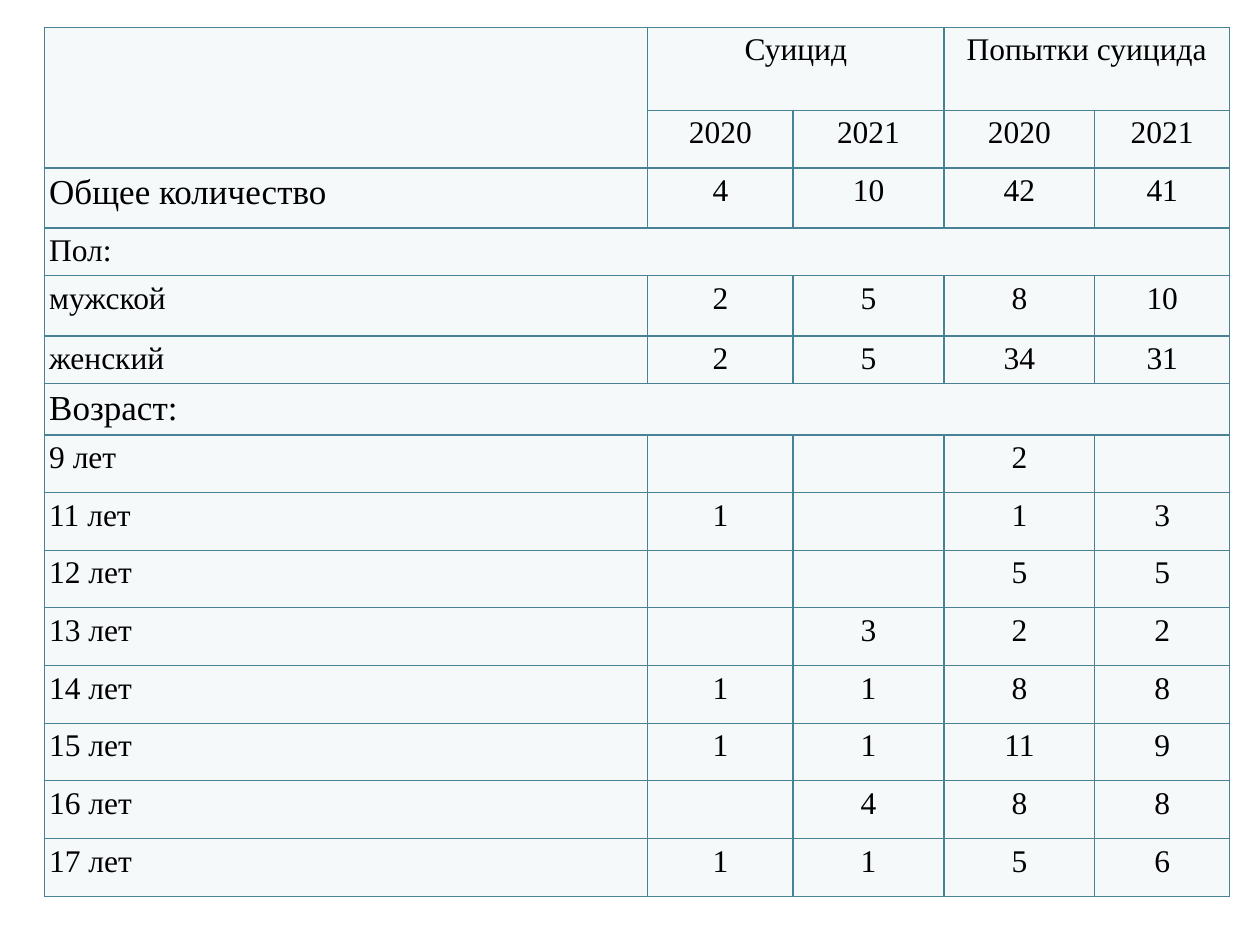
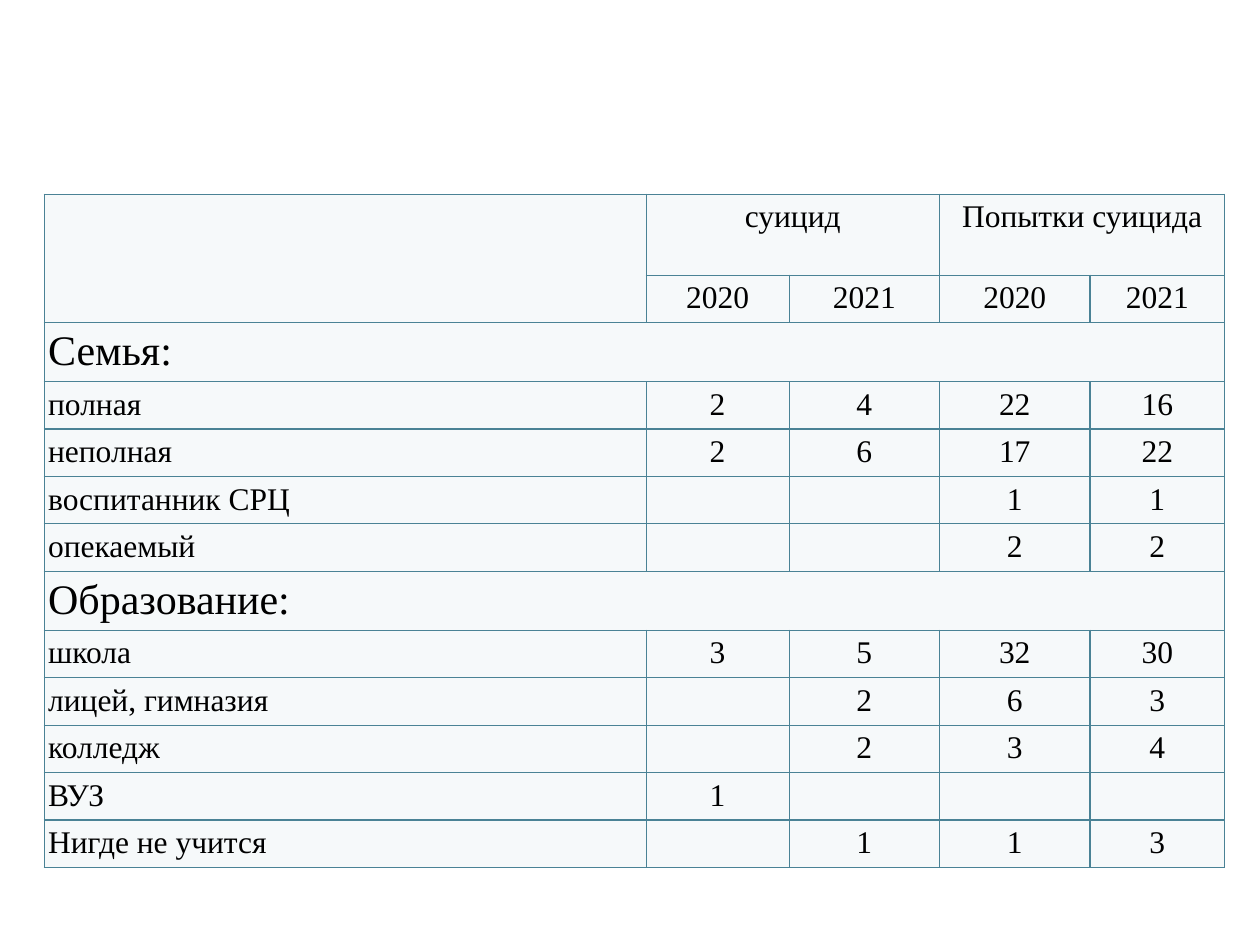
from lxml import etree
from pptx import Presentation
from pptx.dml.color import RGBColor
from pptx.enum import text
from pptx.oxml import ns
from pptx.util import Pt

FONT = "Times New Roman"
INK = "000000"
CELL_FILL = "F6F9FA"
BORDER = "4A8295"
BODY_SIZE = 18
YEARS = ["", "2020", "2021", "2020", "2021"]


def color(value):
    return RGBColor.from_string(value)


def add_borders(cell):
    properties = cell._tc.get_or_add_tcPr()
    for position, side in enumerate(("lnL", "lnR", "lnT", "lnB")):
        line = etree.Element(ns.qn(f"a:{side}"), w=str(Pt(0.75)))
        fill = etree.SubElement(line, ns.qn("a:solidFill"))
        etree.SubElement(fill, ns.qn("a:srgbClr"), val=BORDER)
        properties.insert(position, line)


tables = [
    {
        "top": 15.5,
        "columns": [345, 83, 86.25, 86.25, 77],
        "heights": [47.4, 33.1, 34.3, 27.4, 34.3, 27.4, 29.2] + [32.95] * 8,
        "side_margin": 2.9,
        "label_sizes": {"Общее количество": 20, "Возраст:": 20},
        "rows": [
            ["", "Суицид", "", "Попытки суицида", ""],
            YEARS,
            ["Общее количество", "4", "10", "42", "41"],
            ["Пол:"],
            ["мужской", "2", "5", "8", "10"],
            ["женский", "2", "5", "34", "31"],
            ["Возраст:"],
            ["9 лет", "", "", "2", ""],
            ["11 лет", "1", "", "1", "3"],
            ["12 лет", "", "", "5", "5"],
            ["13 лет", "", "3", "2", "2"],
            ["14 лет", "1", "1", "8", "8"],
            ["15 лет", "1", "1", "11", "9"],
            ["16 лет", "", "4", "8", "8"],
            ["17 лет", "1", "1", "5", "6"],
        ],
    },
    {
        "top": 111,
        "columns": [344, 81.75, 86, 86, 77],
        "heights": [46.3, 27.1, 33.7] + [27.1] * 4 + [33.7] + [27.1] * 5,
        "side_margin": 2.3,
        "label_sizes": {"Семья:": 24, "Образование:": 24},
        "rows": [
            ["", "суицид", "", "Попытки суицида", ""],
            YEARS,
            ["Семья:"],
            ["полная", "2", "4", "22", "16"],
            ["неполная", "2", "6", "17", "22"],
            ["воспитанник СРЦ", "", "", "1", "1"],
            ["опекаемый", "", "", "2", "2"],
            ["Образование:"],
            ["школа", "3", "5", "32", "30"],
            ["лицей, гимназия", "", "2", "6", "3"],
            ["колледж", "", "2", "3", "4"],
            ["ВУЗ", "1", "", "", ""],
            ["Нигде не учится", "", "1", "1", "3"],
        ],
    },
]

presentation = Presentation()
presentation.slide_width = Pt(720)
presentation.slide_height = Pt(540)

for data in tables:
    slide = presentation.slides.add_slide(presentation.slide_layouts[6])
    rows, columns, heights = data["rows"], data["columns"], data["heights"]
    shape = slide.shapes.add_table(
        len(rows), len(columns), Pt(25.2), Pt(data["top"]), Pt(sum(columns)), Pt(sum(heights))
    )
    table = shape.table
    table.first_row = False
    table.horz_banding = False
    for column, width in zip(table.columns, columns):
        column.width = Pt(width)
    for row, height in zip(table.rows, heights):
        row.height = Pt(height)

    table.cell(0, 0).merge(table.cell(1, 0))
    table.cell(0, 1).merge(table.cell(0, 2))
    table.cell(0, 3).merge(table.cell(0, 4))

    for row_index, values in enumerate(rows):
        if len(values) == 1:
            table.cell(row_index, 0).merge(table.cell(row_index, len(columns) - 1))
        for column_index in range(len(columns)):
            cell = table.cell(row_index, column_index)
            cell.fill.solid()
            cell.fill.fore_color.rgb = color(CELL_FILL)
            add_borders(cell)
            cell.margin_left = cell.margin_right = Pt(data["side_margin"])
            cell.margin_top = cell.margin_bottom = Pt(3.2)
            value = values[column_index] if column_index < len(values) else ""
            paragraph = cell.text_frame.paragraphs[0]
            if not value:
                etree.SubElement(paragraph._p, ns.qn("a:endParaRPr"), sz="1200")
                continue
            paragraph.text = value
            if column_index > 0:
                paragraph.alignment = text.PP_ALIGN.CENTER
            font = paragraph.runs[0].font
            font.name = FONT
            font.size = Pt(data["label_sizes"].get(value, BODY_SIZE))
            font.color.rgb = color(INK)

presentation.save("out.pptx")
